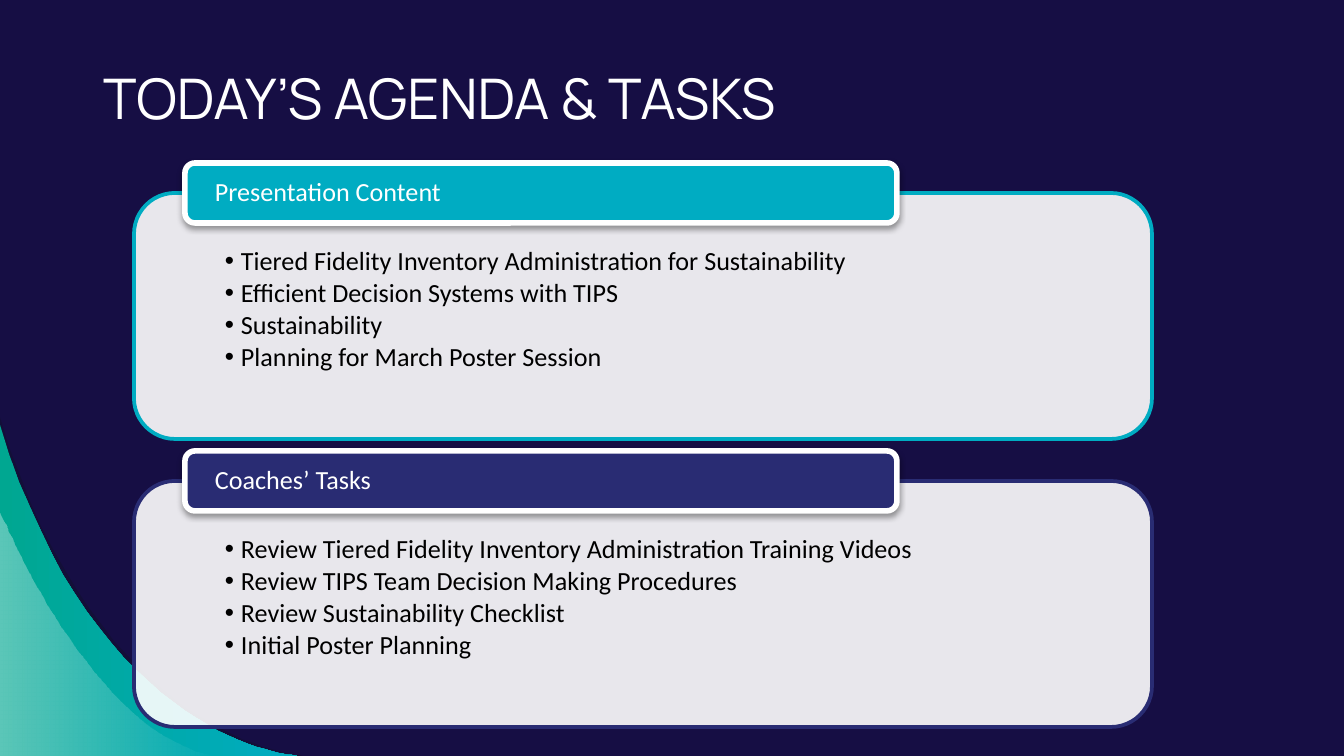
from dataclasses import dataclass

from lxml import etree
from pptx import Presentation
from pptx.dml.color import RGBColor
from pptx.enum.shapes import MSO_SHAPE
from pptx.enum.text import MSO_ANCHOR, MSO_AUTO_SIZE, PP_ALIGN
from pptx.oxml.ns import qn
from pptx.util import Pt

EMU_PER_PX = 914400 / 134.4
ROUNDED = MSO_SHAPE.ROUNDED_RECTANGLE
TOP, MIDDLE = MSO_ANCHOR.TOP, MSO_ANCHOR.MIDDLE
LEFT = PP_ALIGN.LEFT
NO_FIT = MSO_AUTO_SIZE.NONE
TWO_CONTENT_LAYOUT = 3
CURVE_STEPS = 32

NAVY, WHITE, BLACK = "160E44", "FFFFFF", "000000"
TEAL, GREEN, INDIGO, SHADE = "00ACC2", "00A791", "292C73", "12102F"


@dataclass
class Swoosh:
    """Cubic curve from the left edge to the bottom edge, closed at the corner."""
    points: tuple[tuple[int, int], ...]
    colors: tuple[str, ...]
    opacities: tuple[int, ...]


@dataclass
class Section:
    heading: str
    color: str
    items: tuple[str, ...]


SWOOSHES = (
    Swoosh(((0, 417), (98, 745), (305, 756), (305, 756)), (SHADE,), (54,)),
    Swoosh(((0, 425), (97, 746), (297, 756), (297, 756)), (GREEN, TEAL), (100, 100)),
    Swoosh(((0, 511), (0, 511), (93, 741), (218, 756)), (WHITE, WHITE), (36, 0)),
)
SECTIONS = (
    Section("Presentation Content", TEAL, (
        "Tiered Fidelity Inventory Administration for Sustainability",
        "Efficient Decision Systems with TIPS",
        "Sustainability",
        "Planning for March Poster Session",
    )),
    Section("Coaches’ Tasks", INDIGO, (
        "Review Tiered Fidelity Inventory Administration Training Videos",
        "Review TIPS Team Decision Making Procedures",
        "Review Sustainability Checklist",
        "Initial Poster Planning",
    )),
)
SECTION_TOP, SECTION_PITCH = 193, 288


def px(length: float) -> int:
    return round(length * EMU_PER_PX)


def rgb(color: str) -> RGBColor:
    return RGBColor.from_string(color)


def set_all(target, values: dict) -> None:
    for name, value in values.items():
        setattr(target, name, value)


def place(shape, left: int, top: int, width: int, height: int) -> None:
    set_all(shape, {"left": px(left), "top": px(top),
                    "width": px(width), "height": px(height)})


def set_opacities(shape, opacities: tuple[int, ...]) -> None:
    colors = list(shape.element.spPr.iter(qn("a:srgbClr")))
    for color, percent in zip(colors, opacities):
        etree.SubElement(color, qn("a:alpha"), val=str(percent * 1000))


def format_frame(shape, anchor, insets: tuple[int, int, int, int]):
    left, top, right, bottom = map(px, insets)
    set_all(shape.text_frame, {
        "word_wrap": True, "auto_size": NO_FIT, "vertical_anchor": anchor,
        "margin_left": left, "margin_top": top,
        "margin_right": right, "margin_bottom": bottom,
    })
    return shape.text_frame


def write(paragraph, text: str, font: str, size: int, color: str, **layout) -> None:
    set_all(paragraph, {"alignment": LEFT, "space_before": Pt(0), **layout})
    run = paragraph.add_run()
    run.text = text
    set_all(run.font, {"name": font, "size": Pt(size), "bold": False})
    run.font.color.rgb = rgb(color)


def add_bullet(paragraph, color: str) -> None:
    properties = paragraph._p.get_or_add_pPr()
    properties.set("marL", str(px(16)))
    properties.set("indent", str(px(-16)))
    bullet_color = etree.SubElement(properties, qn("a:buClr"))
    etree.SubElement(bullet_color, qn("a:srgbClr"), val=color)
    etree.SubElement(properties, qn("a:buFont"), typeface="Arial")
    etree.SubElement(properties, qn("a:buChar"), char="•")


def draw_swoosh(slide, swoosh: Swoosh) -> None:
    def curve_point(t: float) -> tuple[float, ...]:
        weights = ((1 - t) ** 3, 3 * t * (1 - t) ** 2, 3 * t * t * (1 - t), t ** 3)
        return tuple(sum(w * p[axis] for w, p in zip(weights, swoosh.points))
                     for axis in (0, 1))

    curve = [curve_point(step / CURVE_STEPS) for step in range(CURVE_STEPS + 1)]
    builder = slide.shapes.build_freeform(*curve[0], scale=EMU_PER_PX)
    builder.add_line_segments(curve[1:] + [(0, 756)], close=True)
    shape = builder.convert_to_shape()
    shape.shadow.inherit = False
    if len(swoosh.colors) == 1:
        shape.fill.solid()
        shape.fill.fore_color.rgb = rgb(swoosh.colors[0])
    else:
        shape.fill.gradient()
        shape.fill.gradient_angle = 0
        for stop, color in zip(shape.fill.gradient_stops, swoosh.colors):
            stop.color.rgb = rgb(color)
    set_opacities(shape, swoosh.opacities)
    shape.line.fill.background()


def add_rounded_box(slide, box: tuple[int, int, int, int], fill: str,
                    line: str, line_width: int):
    shape = slide.shapes.add_shape(ROUNDED, *map(px, box))
    shape.shadow.inherit = False
    shape.fill.solid()
    shape.fill.fore_color.rgb = rgb(fill)
    shape.line.color.rgb = rgb(line)
    shape.line.width = Pt(line_width)
    return shape


def add_drop_shadow(shape) -> None:
    effects = shape.element.spPr.find(qn("a:effectLst"))
    shadow = etree.SubElement(effects, qn("a:outerShdw"), blurRad=str(Pt(3.1)),
                              dist=str(Pt(1.6)), dir="5400000", rotWithShape="0")
    color = etree.SubElement(shadow, qn("a:srgbClr"), val=BLACK)
    etree.SubElement(color, qn("a:alpha"), val="38000")


def draw_section(slide, section: Section, body, top: int) -> None:
    # Translucent panel
    panel = add_rounded_box(slide, (134, top, 1018, 246), WHITE, section.color, 2)
    set_opacities(panel, (90,))

    # Bulleted list, brought in front of the panel
    slide.shapes.element.append(body.element)
    place(body, 146, top + 12, 993, 222)
    frame = format_frame(body, TOP, (79, 43, 79, 15))
    for index, item in enumerate(section.items):
        paragraph = frame.add_paragraph() if index else frame.paragraphs[0]
        add_bullet(paragraph, BLACK)
        write(paragraph, item, "Calibri", 14, BLACK,
              level=1, line_spacing=0.9, space_after=Pt(2))

    # Heading tab
    tab = add_rounded_box(slide, (185, top - 30, 712, 60), section.color, WHITE, 3)
    add_drop_shadow(tab)
    frame = format_frame(tab, MIDDLE, (27, 0, 27, 0))
    write(frame.paragraphs[0], section.heading, "Calibri", 14, WHITE, line_spacing=0.9)


def main() -> None:
    presentation = Presentation()
    set_all(presentation, {"slide_width": px(1344), "slide_height": px(756)})
    slide = presentation.slides.add_slide(presentation.slide_layouts[TWO_CONTENT_LAYOUT])
    slide.background.fill.solid()
    slide.background.fill.fore_color.rgb = rgb(NAVY)
    title, *bodies = slide.placeholders

    # Corner decoration
    for swoosh in SWOOSHES:
        draw_swoosh(slide, swoosh)

    # Agenda sections
    for index, (section, body) in enumerate(zip(SECTIONS, bodies[:2])):
        draw_section(slide, section, body, SECTION_TOP + index * SECTION_PITCH)

    # Title
    place(title, 90, 51, 1034, 93)
    frame = format_frame(title, MIDDLE, (13, 13, 13, 13))
    write(frame.paragraphs[0], "TODAY’S AGENDA & TASKS", "Manrope", 30, WHITE)

    presentation.save("out.pptx")


if __name__ == "__main__":
    main()
